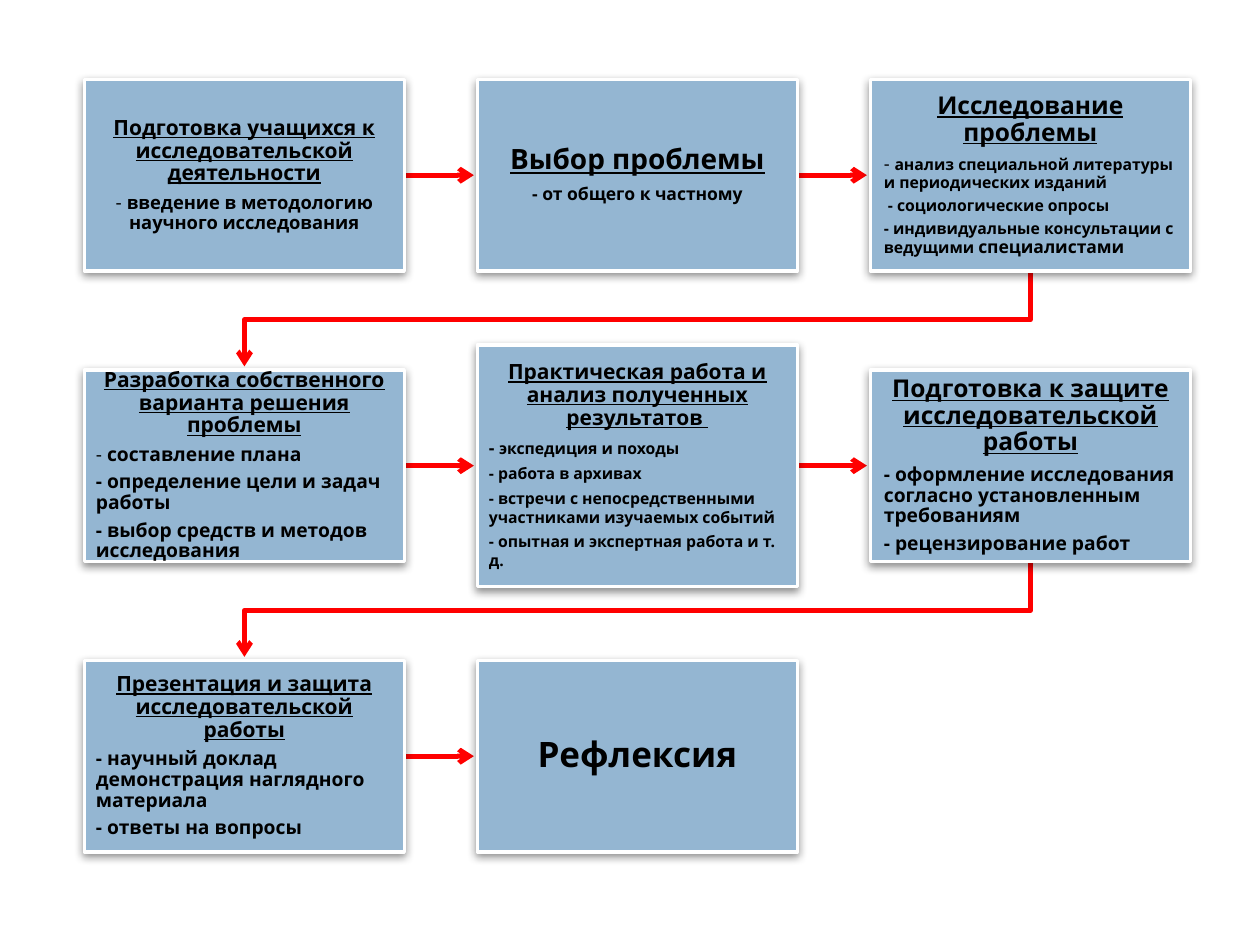
from dataclasses import dataclass

from lxml import etree
from pptx import Presentation
from pptx import util as u
from pptx.dml.color import RGBColor
from pptx.enum import shapes, text
from pptx.oxml.ns import qn

Pt = u.Pt
CENTER, LEFT = text.PP_ALIGN.CENTER, text.PP_ALIGN.LEFT


@dataclass(frozen=True)
class Theme:
    font: str = "Open Sans"
    card: RGBColor = RGBColor(0x94, 0xB6, 0xD2)
    border: RGBColor = RGBColor(0xFF, 0xFF, 0xFF)
    ink: RGBColor = RGBColor(0, 0, 0)
    arrow: RGBColor = RGBColor(0xFF, 0, 0)
    border_width: float = 2
    arrow_width: float = 2.75
    final: float = 20
    large: float = 16
    medium: float = 14
    heading: float = 12
    body: float = 11
    lead: float = 10.5
    note: float = 10
    small: float = 9


THEME = Theme()

# Grid of steps, in points
CARD_W, CARD_H, TALL_H = 182.9, 109.4, 138.2
LEFT_X, TOP_Y = 48.2, 45.4
PITCH_X, PITCH_Y = 224.6, 166
ARROW_GAP = 2
TURN_DROP = 28


@dataclass
class Step:
    heading: str
    size: float
    inset: float
    points: tuple = ()      # each point is a tuple of (text, size, bold) runs
    align: int = LEFT
    height: float = CARD_H
    spacing: float = 0.9    # line spacing of the points
    underline: bool = True


def point(words, size):
    return ((words, size, True),)


def dashed(words, size, dash_size, bold=False):
    return (("- ", dash_size, bold), (words, size, True))


class FlowSlide:
    def __init__(self, slide, theme):
        self.slide, self.theme = slide, theme

    def style_arrow(self, arrow):
        arrow.line.color.rgb = self.theme.arrow
        arrow.line.width = Pt(self.theme.arrow_width)
        outline = arrow._element.spPr.find(qn("a:ln"))
        etree.SubElement(outline, qn("a:tailEnd"), type="arrow")

    def straight_arrow(self, x, y, end_x):
        arrow = self.slide.shapes.add_connector(
            shapes.MSO_CONNECTOR.STRAIGHT, Pt(x), Pt(y), Pt(end_x), Pt(y))
        self.style_arrow(arrow)
        etree.SubElement(arrow._element.spPr, qn("a:effectLst"))

    def turning_arrow(self, x, y, end_x, end_y):
        corners = [(x, y + TURN_DROP), (end_x, y + TURN_DROP), (end_x, end_y)]
        route = self.slide.shapes.build_freeform(Pt(x), Pt(y))
        route.add_line_segments([(Pt(a), Pt(b)) for a, b in corners], close=False)
        arrow = route.convert_to_shape()
        arrow.fill.background()
        arrow.shadow.inherit = False
        self.style_arrow(arrow)

    def soft_shadow(self, card):
        card.shadow.inherit = False
        effects = card._element.spPr.find(qn("a:effectLst"))
        shadow = etree.SubElement(
            effects, qn("a:outerShdw"), blurRad=str(Pt(5)), dist=str(Pt(2)),
            dir="5400000", algn="ctr", rotWithShape="0")
        color = etree.SubElement(shadow, qn("a:srgbClr"), val="000000")
        etree.SubElement(color, qn("a:alpha"), val="43000")

    def paragraph(self, paragraph, runs, align, spacing, underline=False):
        paragraph.alignment = align
        paragraph.line_spacing = spacing
        paragraph.space_after = Pt(round(0.35 * max(size for _, size, _ in runs), 2))
        for words, size, bold in runs:
            run = paragraph.add_run()
            run.text = words
            run.font.name = self.theme.font
            run.font.size = Pt(size)
            run.font.bold = bold
            run.font.underline = underline
            run.font.color.rgb = self.theme.ink

    def card(self, step, x, y):
        top = y - (step.height - CARD_H) / 2
        card = self.slide.shapes.add_shape(
            shapes.MSO_SHAPE.RECTANGLE, Pt(x), Pt(top), Pt(CARD_W), Pt(step.height))
        card.fill.solid()
        card.fill.fore_color.rgb = self.theme.card
        card.line.color.rgb = self.theme.border
        card.line.width = Pt(self.theme.border_width)
        self.soft_shadow(card)

        frame = card.text_frame
        frame.word_wrap = True
        frame.vertical_anchor = text.MSO_ANCHOR.MIDDLE
        frame.margin_left = frame.margin_right = Pt(step.inset)
        frame.margin_top = frame.margin_bottom = Pt(step.inset)
        self.paragraph(frame.paragraphs[0], point(step.heading, step.size),
                       CENTER, 0.9, step.underline)
        for runs in step.points:
            self.paragraph(frame.add_paragraph(), runs, step.align, step.spacing)


T = THEME
STEPS = [
    Step("Подготовка учащихся к исследовательской деятельности", T.heading, 6.6,
         (dashed("введение в методологию научного исследования", T.lead, T.body),),
         align=CENTER),
    Step("Выбор проблемы", T.large, 8.8,
         (point("- от общего к частному", T.note),), align=CENTER),
    Step("Исследование проблемы", T.medium, 7.7,
         (dashed("анализ специальной литературы и периодических изданий",
                 T.small, T.lead),
          point(" - социологические опросы", T.small),
          (("- индивидуальные консультации с ведущими ", T.small, True),
           ("специалистами", T.note, True)))),
    Step("Разработка собственного варианта решения проблемы", T.heading, 6.6,
         (dashed("составление плана", T.body, T.body),
          point("- определение цели и задач работы", T.body),
          point("- выбор средств и методов исследования", T.body))),
    Step("Практическая работа и анализ полученных результатов ", T.heading, 6.6,
         (dashed("экспедиция и походы", T.small, T.note, bold=True),
          point("- работа в архивах", T.small),
          point("- встречи с непосредственными участниками изучаемых событий", T.small),
          point("- опытная и экспертная работа и т. д.", T.small)),
         height=TALL_H, spacing=1.0),
    Step("Подготовка к защите исследовательской работы", T.medium, 7.7,
         (point("- оформление исследования согласно установленным требованиям", T.body),
          point("- рецензирование работ", T.body))),
    Step("Презентация и защита исследовательской работы", T.heading, 6.6,
         (point("- научный доклад демонстрация наглядного материала", T.body),
          point("- ответы на вопросы", T.body))),
    Step("Рефлексия", T.final, 11, underline=False),
]


def main():
    deck = Presentation()
    deck.slide_width, deck.slide_height = Pt(720), Pt(540)
    flow = FlowSlide(deck.slides.add_slide(deck.slide_layouts[6]), THEME)
    places = [(LEFT_X + i % 3 * PITCH_X, TOP_Y + i // 3 * PITCH_Y)
              for i in range(len(STEPS))]

    # Arrows between consecutive steps
    for (x, y), (next_x, next_y) in zip(places, places[1:]):
        if next_y == y:
            flow.straight_arrow(x + CARD_W, y + CARD_H / 2, next_x - ARROW_GAP)
        else:
            flow.turning_arrow(x + CARD_W / 2, y + CARD_H,
                               next_x + CARD_W / 2, next_y - ARROW_GAP)

    # Step cards
    for step, (x, y) in zip(STEPS, places):
        flow.card(step, x, y)

    deck.save("out.pptx")


if __name__ == "__main__":
    main()
